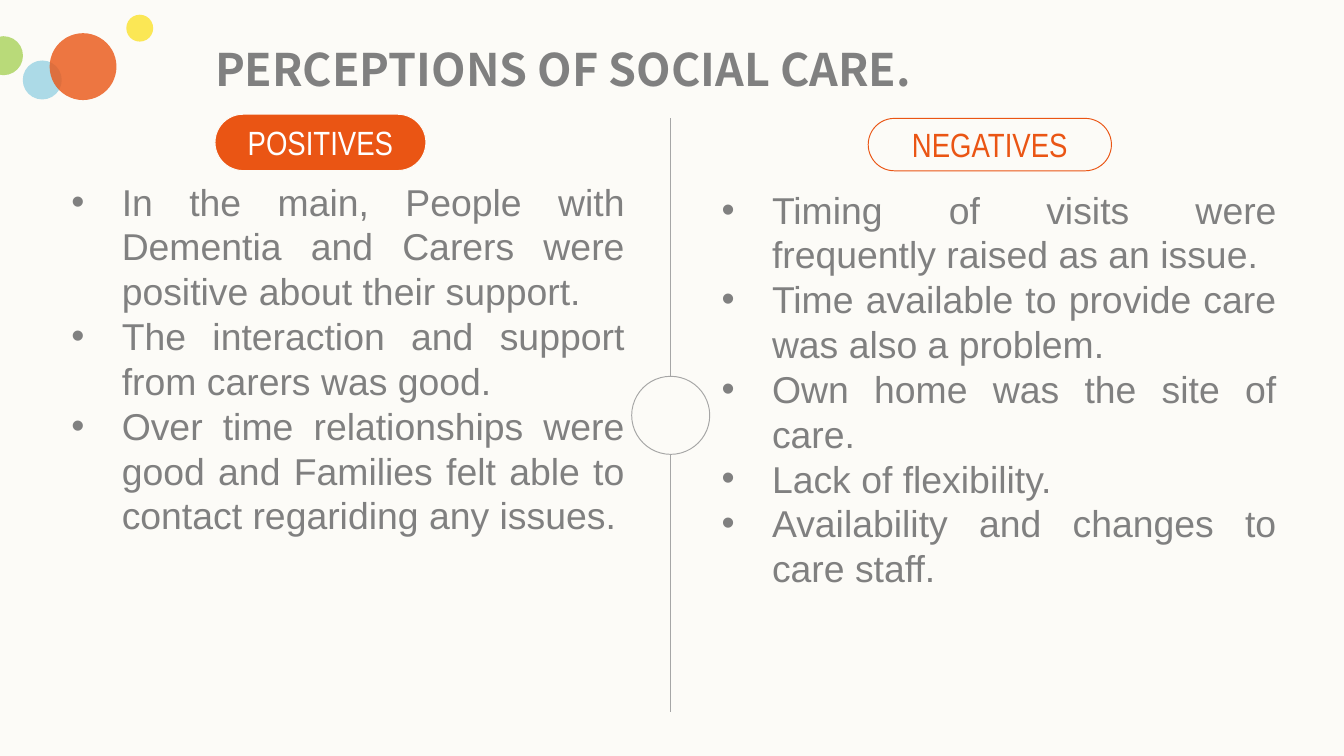
from lxml import etree
from pptx import Presentation
from pptx.dml.color import RGBColor
from pptx.enum import shapes, text
from pptx.oxml import ns
from pptx.util import Pt

PAPER, ORANGE, GREY, RULE, WHITE = "FCFBF7", "EA5514", "808080", "A6A6A6", "FFFFFF"


def color(value):
    return RGBColor.from_string(value)


class SlideBuilder:
    body_font, label_font, title_font = "Arial", "Arial Narrow", "Noto Sans CJK SC"
    line_width = Pt(0.5)
    indent = Pt(27)

    def __init__(self, slide):
        self.slide = slide
        slide.background.fill.solid()
        slide.background.fill.fore_color.rgb = color(PAPER)

    def shape(self, kind, box, fill, line=None, opacity=None):
        shape = self.slide.shapes.add_shape(kind, *map(Pt, box))
        shape.shadow.inherit = False
        shape.fill.solid()
        shape.fill.fore_color.rgb = color(fill)
        if opacity:
            rgb = shape._element.spPr.find(".//" + ns.qn("a:srgbClr"))
            etree.SubElement(rgb, ns.qn("a:alpha"), val=str(opacity * 1000))
        if line:
            shape.line.color.rgb = color(line)
            shape.line.width = self.line_width
        else:
            shape.line.fill.background()
        return shape

    def circle(self, box, fill, line=None, opacity=None):
        return self.shape(shapes.MSO_SHAPE.OVAL, box, fill, line, opacity)

    def pill(self, label, box, fill, line, ink):
        shape = self.shape(shapes.MSO_SHAPE.ROUNDED_RECTANGLE, box, fill, line)
        shape.adjustments[0] = 0.5
        frame = shape.text_frame
        frame.text = label
        frame.vertical_anchor = text.MSO_ANCHOR.MIDDLE
        frame.paragraphs[0].alignment = text.PP_ALIGN.CENTER
        self.style(frame.paragraphs[0], self.label_font, 18, ink)

    def rule(self, x, top, bottom):
        line = self.slide.shapes.add_connector(
            shapes.MSO_CONNECTOR.STRAIGHT, Pt(x), Pt(top), Pt(x), Pt(bottom))
        line.line.color.rgb = color(RULE)
        line.line.width = self.line_width
        etree.SubElement(line._element.spPr, ns.qn("a:effectLst"))

    def text_frame(self, box):
        frame = self.slide.shapes.add_textbox(*map(Pt, box)).text_frame
        frame.word_wrap = True
        frame.margin_left = frame.margin_right = 0
        frame.margin_top = frame.margin_bottom = 0
        return frame

    def title(self, words, box):
        frame = self.text_frame(box)
        frame.text = words
        frame.vertical_anchor = text.MSO_ANCHOR.MIDDLE
        self.style(frame.paragraphs[0], self.title_font, 24, GREY, bold=True)

    def bullets(self, items, box):
        frame = self.text_frame(box)
        frame.text = "\n".join(items)
        for paragraph in frame.paragraphs:
            paragraph.alignment = text.PP_ALIGN.JUSTIFY
            paragraph.line_spacing = Pt(24)
            properties = paragraph._p.get_or_add_pPr()
            properties.set("marL", str(self.indent))
            properties.set("indent", str(-self.indent))
            etree.SubElement(properties, ns.qn("a:buFont"), typeface=self.body_font)
            etree.SubElement(properties, ns.qn("a:buChar"), char="•")
            self.style(paragraph, self.body_font, 20, GREY)

    def style(self, paragraph, font, size, ink, bold=False):
        for run in paragraph.runs:
            run.font.name = font
            run.font.size = Pt(size)
            run.font.bold = bold
            run.font.color.rgb = color(ink)
            east_asian = etree.SubElement(run._r.get_or_add_rPr(), ns.qn("a:ea"))
            east_asian.set("typeface", font)


def main():
    presentation = Presentation()
    presentation.slide_width, presentation.slide_height = Pt(720), Pt(405)
    builder = SlideBuilder(presentation.slides.add_slide(presentation.slide_layouts[6]))

    # Positives
    builder.bullets([
        "In the main, People with Dementia and Carers were positive about their support.",
        "The interaction and support from carers was good.",
        "Over time relationships were good and Families felt able to contact "
        "regariding any issues.",
    ], (38.2, 95.8, 296.6, 242.6))
    builder.pill("POSITIVES", (115.2, 61.2, 113, 30.2), ORANGE, PAPER, WHITE)

    # Divider
    builder.circle((338.4, 201.6, 41.8, 41.8), PAPER, RULE)
    for top, bottom in ((63.4, 201.6), (243.4, 381.6)):
        builder.rule(359.3, top, bottom)

    # Negatives
    builder.bullets([
        "Timing of visits were frequently raised as an issue.",
        "Time available to provide care was also a problem.",
        "Own home was the site of care.",
        "Lack of flexibility.",
        "Availability and changes to care staff.",
    ], (386.6, 100.1, 297.4, 290.9))
    builder.pill("NEGATIVES", (465.1, 63.4, 130.3, 28.1), PAPER, ORANGE, ORANGE)

    # Corner dots
    for left, top, size, fill in ((67.7, 7.9, 14.4, "FBE22D"),
                                  (-8.6, 19.4, 20.9, "A9D25A"),
                                  (12.2, 32.4, 20.9, "98D2E3"),
                                  (26.6, 17.8, 35.8, ORANGE)):
        builder.circle((left, top, size, size), fill, opacity=80)

    # Title
    builder.title("PERCEPTIONS OF SOCIAL CARE.", (115.2, 22.3, 488.9, 28.8))

    presentation.save("out.pptx")


if __name__ == "__main__":
    main()
